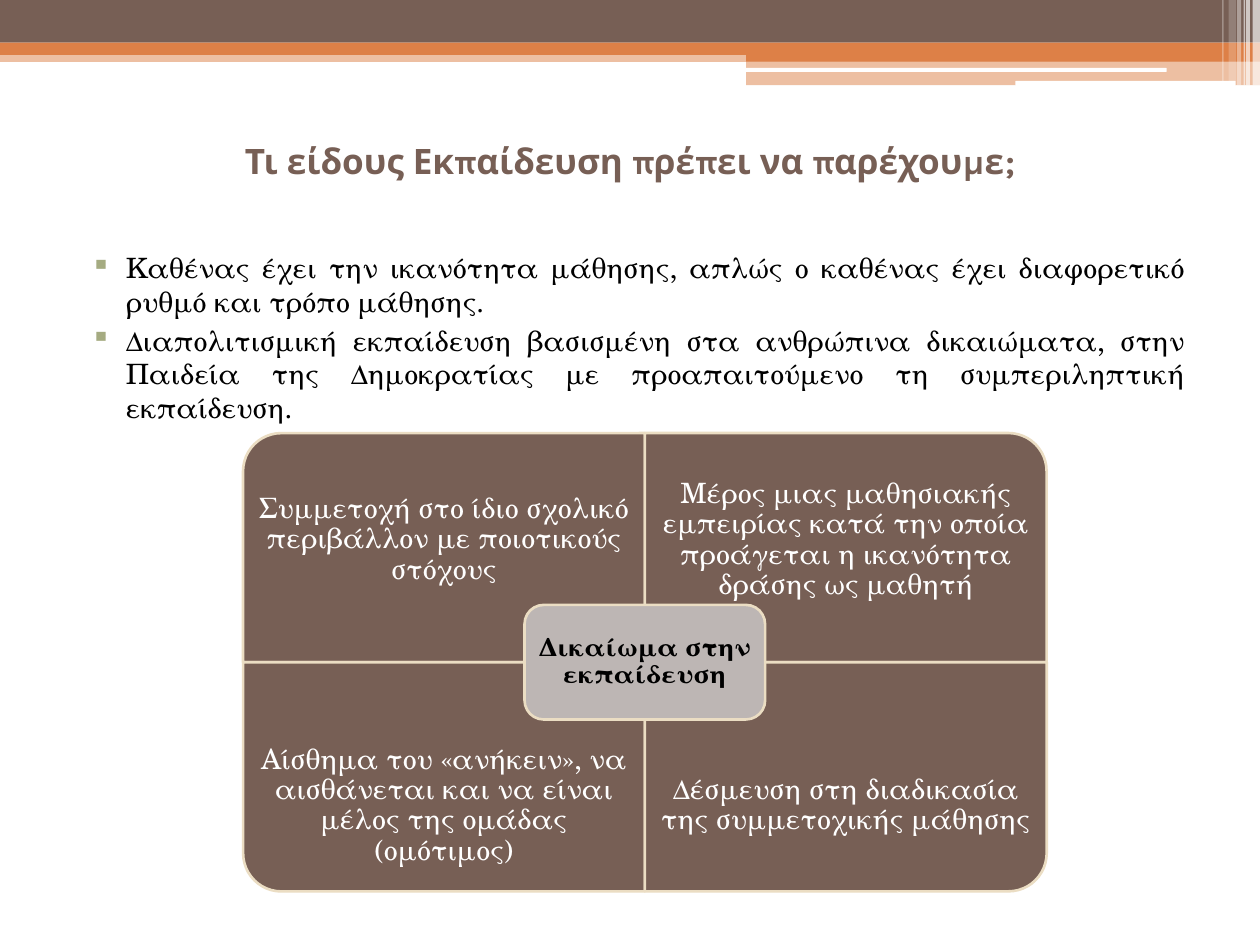
from lxml.etree import SubElement
from pptx import Presentation
from pptx.dml.color import RGBColor
from pptx.enum.shapes import MSO_SHAPE
from pptx.enum.text import MSO_ANCHOR, PP_ALIGN
from pptx.oxml.ns import qn
from pptx.util import Cm, Pt

COLORS = {
    "brown": "775F55", "orange": "DD8047", "white": "FFFFFF", "black": "000000",
    "cream": "EBDDC3", "gray": "BDB6B4", "green": "A5AB81",
}
SERIF = "TeX Gyre Schola"

deck = Presentation()
deck.slide_width, deck.slide_height = Cm(25.4), Cm(19.05)
page = deck.slides.add_slide(deck.slide_layouts[6])


def add_block(kind, left, top, width, height, color, opacity=100, outline=None):
    """Add a flat filled shape; sizes in cm, opacity in percent."""
    block = page.shapes.add_shape(kind, Cm(left), Cm(top), Cm(width), Cm(height))
    block.shadow.inherit = False
    block.fill.solid()
    block.fill.fore_color.rgb = RGBColor.from_string(COLORS[color])
    if opacity < 100:
        color_node = block.fill._xPr.find(qn("a:solidFill"))[0]
        SubElement(color_node, qn("a:alpha")).set("val", str(opacity * 1000))
    if outline:
        block.line.color.rgb = RGBColor.from_string(COLORS[outline])
        block.line.width = Pt(1.5)
    else:
        block.line.fill.background()
    return block


def add_text(left, top, width, height, paragraphs, font, size, color, bold=False,
             align=PP_ALIGN.CENTER, anchor=MSO_ANCHOR.MIDDLE, margins=None):
    """Add a wrapped text box; margins are left, top, right, bottom in cm."""
    box = page.shapes.add_textbox(Cm(left), Cm(top), Cm(width), Cm(height))
    frame = box.text_frame
    frame.word_wrap = True
    frame.vertical_anchor = anchor
    if margins:
        (frame.margin_left, frame.margin_top,
         frame.margin_right, frame.margin_bottom) = [Cm(margin) for margin in margins]
    frame.text = "\n".join(paragraphs)
    for para in frame.paragraphs:
        para.alignment = align
        for span in para.runs:
            span.font.name = font
            span.font.size = Pt(size)
            span.font.bold = bold
            span.font.color.rgb = RGBColor.from_string(COLORS[color])
    return box


# Header bands, then the translucent stripes at the right edge
for left, top, width, height, color, opacity in [
    (0, 1.02, 25.4, 0.23, "orange", 50),
    (0, 0, 25.4, 0.86, "brown", 100),
    (0, 0.86, 25.4, 0.25, "orange", 100),
    (15.04, 0.99, 10.36, 0.25, "orange", 100),
    (15.04, 1.22, 10.36, 0.5, "orange", 50),
]:
    add_block(MSO_SHAPE.RECTANGLE, left, top, width, height, color, opacity)

add_block(MSO_SHAPE.ROUNDED_RECTANGLE, 15.01, 1.37, 8.51, 0.08, "white")
add_block(MSO_SHAPE.ROUNDED_RECTANGLE, 20.47, 1.63, 4.44, 0.1, "white")

for left, width, height, opacity in [
    (25.25, 0.15, 1.73, 65), (25.12, 0.08, 1.73, 65), (25.07, 0.03, 1.73, 60),
    (24.94, 0.08, 1.73, 40), (24.77, 0.15, 1.63, 20), (24.64, 0.03, 1.63, 30),
]:
    add_block(MSO_SHAPE.RECTANGLE, left, 0, width, height, "white", opacity)

# Title and bullets
add_text(1.27, 2.34, 22.86, 1.8, ["Τι είδους Εκπαίδευση πρέπει να παρέχουμε;"],
         "Karla", 20, "brown", bold=True)

body = add_text(1.27, 4.93, 22.86, 13.33, [
    "Καθένας έχει την ικανότητα μάθησης, απλώς ο καθένας έχει διαφορετικό "
    "ρυθμό και τρόπο μάθησης.",
    "Διαπολιτισμική εκπαίδευση βασισμένη στα ανθρώπινα δικαιώματα, στην Παιδεία "
    "της Δημοκρατίας με προαπαιτούμενο τη συμπεριληπτική εκπαίδευση.",
], SERIF, 16, "black", align=PP_ALIGN.JUSTIFY, anchor=MSO_ANCHOR.TOP)
for para in body.text_frame.paragraphs:
    para.space_before = Pt(3)
    properties = para._p.get_or_add_pPr()
    properties.set("marL", str(Cm(1.02)))
    properties.set("indent", str(Cm(-0.71)))
    bullet_color = SubElement(properties, qn("a:buClr"))
    SubElement(bullet_color, qn("a:srgbClr")).set("val", COLORS["green"])
    SubElement(properties, qn("a:buChar")).set("char", "▪")

# Matrix: four quadrants around a central label
center_x, center_y = 13, 13.35
quad_width, quad_height, text_height = 8.1, 4.62, 3.45
upper_margins = (0.3, 0.86, 0.3, 0)
lower_margins = (0.3, 0.3, 0.3, 0.3)

for column, row, rotation, words in [
    (0, 0, 270, "Συμμετοχή στο ίδιο σχολικό περιβάλλον με ποιοτικούς στόχους"),
    (1, 0, 0, "Μέρος μιας μαθησιακής εμπειρίας κατά την οποία προάγεται "
              "η ικανότητα δράσης ως μαθητή"),
    (0, 1, 180, "Αίσθημα του «ανήκειν», να αισθάνεται και να είναι μέλος "
                "της ομάδας (ομότιμος)"),
    (1, 1, 90, "Δέσμευση στη διαδικασία της συμμετοχικής μάθησης"),
]:
    left = center_x + (column - 1) * quad_width
    top = center_y + (row - 1) * quad_height
    width, height = quad_width, quad_height
    if rotation % 180:
        width, height = height, width
    quadrant = add_block(MSO_SHAPE.ROUND_1_RECTANGLE,
                         left + (quad_width - width) / 2,
                         top + (quad_height - height) / 2,
                         width, height, "brown", outline="cream")
    quadrant.rotation = rotation
    label = add_text(left, top + row * (quad_height - text_height),
                     quad_width, text_height, [words], SERIF, 16, "white",
                     margins=lower_margins if row else upper_margins)
    label.text_frame.paragraphs[0].line_spacing = 0.9

hub_width, hub_height, hub_inset = 4.85, 2.31, 0.11
hub_left, hub_top = center_x - hub_width / 2, center_y - hub_height / 2
add_block(MSO_SHAPE.ROUNDED_RECTANGLE, hub_left, hub_top, hub_width, hub_height,
          "gray", outline="cream")
hub_label = add_text(hub_left + hub_inset, hub_top + hub_inset,
                     hub_width - 2 * hub_inset, hub_height - 2 * hub_inset,
                     ["Δικαίωμα στην εκπαίδευση"], SERIF, 14, "black", bold=True,
                     margins=(0.15, 0.15, 0.15, 0.15))
hub_label.text_frame.paragraphs[0].line_spacing = 0.9

deck.save("out.pptx")
